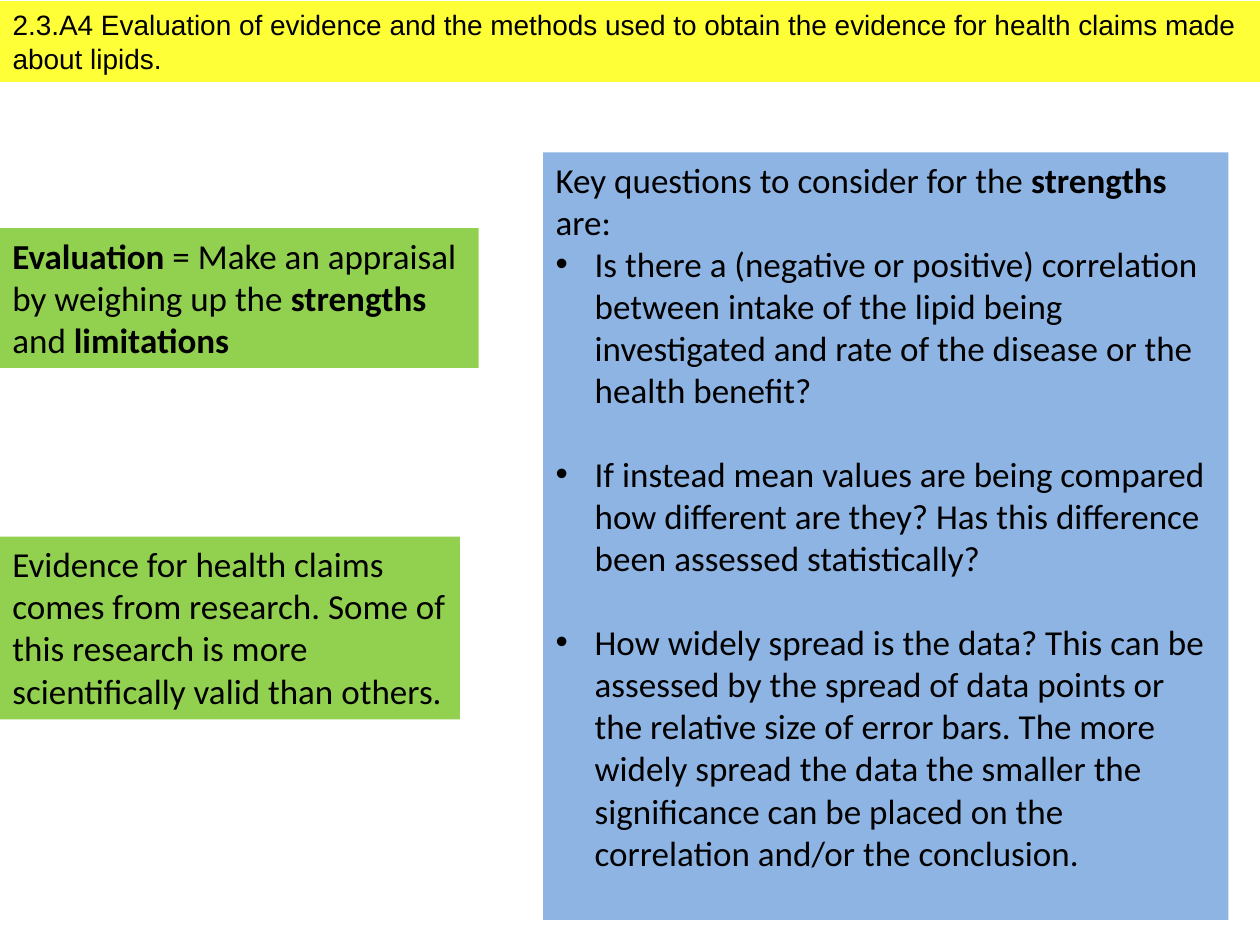
from lxml.etree import SubElement
from pptx import Presentation
from pptx.dml.color import RGBColor
from pptx.enum.text import MSO_ANCHOR, MSO_AUTO_SIZE, PP_ALIGN
from pptx.oxml.ns import qn
from pptx.util import Inches, Pt

BLACK = RGBColor(0x00, 0x00, 0x00)
YELLOW = RGBColor(0xFF, 0xFF, 0x00)
GREEN = RGBColor(0x92, 0xD0, 0x50)
BLUE = RGBColor(0x8E, 0xB4, 0xE3)


def write(panel, paragraphs, box, fill, font="Calibri", size=20,
          anchor=MSO_ANCHOR.TOP, gap=0):
    """Place and fill a panel; each paragraph is a list of runs, every second one bold."""
    panel.left, panel.top, panel.width, panel.height = [Inches(v) for v in box]
    panel.fill.solid()
    panel.fill.fore_color.rgb = fill
    frame = panel.text_frame
    frame.word_wrap = True
    frame.auto_size = MSO_AUTO_SIZE.NONE
    frame.vertical_anchor = anchor
    for index, runs in enumerate(paragraphs):
        paragraph = frame.paragraphs[0] if index == 0 else frame.add_paragraph()
        paragraph.alignment = PP_ALIGN.LEFT
        paragraph.space_before = Pt(gap if index > 1 else 0)
        for position, text in enumerate(runs):
            run = paragraph.add_run()
            run.text = text
            run.font.name = font
            run.font.size = Pt(size)
            run.font.bold = position % 2 == 1
            run.font.color.rgb = BLACK


presentation = Presentation()
presentation.slide_width = Inches(10)
presentation.slide_height = Inches(7.5)
slide = presentation.slides.add_slide(presentation.slide_layouts[1])

# Heading band, slightly transparent
heading = slide.shapes.title
write(heading, [["2.3.A4 Evaluation of evidence and the methods used to obtain "
                 "the evidence for health claims made about lipids."]],
      (0, 0.01, 10, 0.64), YELLOW, font="Arial", size=16, anchor=MSO_ANCHOR.MIDDLE)
yellow_fill = next(heading.element.spPr.iter(qn("a:srgbClr")))
SubElement(yellow_fill, qn("a:alpha"), val="78000")

# Definition and evidence panels on the left
left_panels = [
    ((0, 1.81, 3.8, 1.11),
     ["", "Evaluation", " = Make an appraisal by weighing up the ", "strengths",
      " and ", "limitations"]),
    ((0, 4.26, 3.65, 1.45),
     ["Evidence for health claims comes from research. Some of this research "
      "is more scientifically valid than others."]),
]
for box, runs in left_panels:
    panel = slide.shapes.add_textbox(0, 0, 0, 0)
    write(panel, [runs], box, GREEN)

# Key questions about strengths
questions = slide.placeholders[1]
write(questions, [
    ["Key questions to consider for the ", "strengths", " are:"],
    ["Is there a (negative or positive) correlation between intake of the lipid "
     "being investigated and rate of the disease or the health benefit?"],
    ["If instead mean values are being compared how different are they? "
     "Has this difference been assessed statistically?"],
    ["How widely spread is the data? This can be assessed by the spread of data "
     "points or the relative size of error bars. The more widely spread the data "
     "the smaller the significance can be placed on the correlation and/or the "
     "conclusion."],
], (4.31, 1.21, 5.44, 6.09), BLUE, gap=24)

# Bullets for the questions, none for their introduction
for index, paragraph in enumerate(questions.text_frame.paragraphs):
    properties = paragraph._p.get_or_add_pPr()
    indent = Inches(0.31) if index else 0
    properties.set("marL", str(indent))
    properties.set("indent", str(-indent))
    if index:
        SubElement(properties, qn("a:buFont"), typeface="Arial")
        SubElement(properties, qn("a:buChar"), char="•")
    else:
        SubElement(properties, qn("a:buNone"))

presentation.save("out.pptx")
